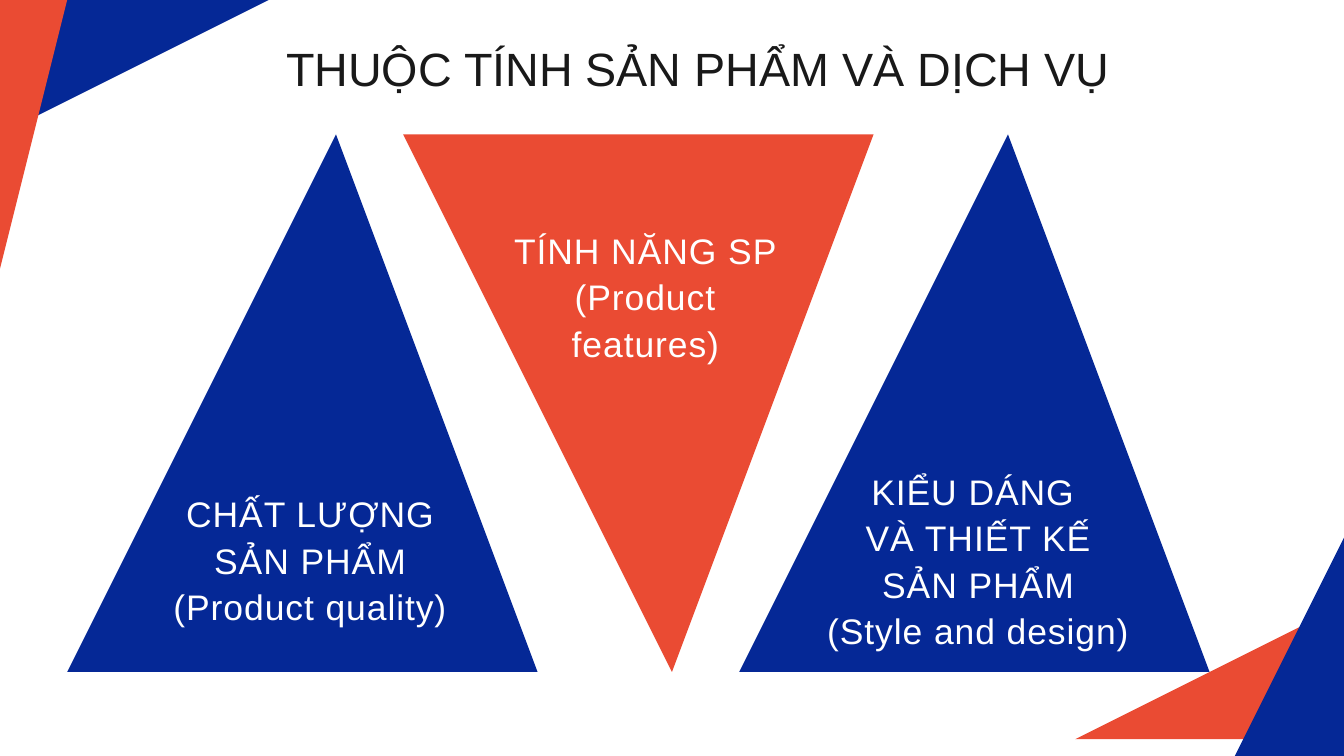
from pptx import Presentation
from pptx.dml.color import RGBColor
from pptx.enum.text import MSO_ANCHOR, MSO_AUTO_SIZE, PP_ALIGN
from pptx.util import Inches, Pt

WIDTH, HEIGHT = 20, 11.25
BLUE, ORANGE, WHITE, INK = "052896", "EA4B33", "FFFFFF", "191919"
TOP, BASE = 2.5, 10.22  # shared edges of the three large triangles

TITLE = "THUỘC TÍNH SẢN PHẨM VÀ DỊCH VỤ"
# left, right, points up, colour, text box (left, top, width, height), lines
ATTRIBUTES = [
    (1.31, 7.92, True, BLUE, (2.35, 7.27, 4.53, 2.05),
     ["CHẤT LƯỢNG", "SẢN PHẨM", "(Product quality)"]),
    (6.23, 12.97, False, ORANGE, (7.5, 3.35, 4.21, 2.05),
     ["TÍNH NĂNG SP", "(Product features)"]),
    (11.1, 18, True, BLUE, (12.19, 6.93, 4.73, 2.73),
     ["KIỂU DÁNG ", "VÀ THIẾT KẾ", "SẢN PHẨM", "(Style and design)"]),
]
# Corner decorations, back to front
CORNERS = [
    (BLUE, [(-0.13, 1.89), (-0.12, 0), (4.11, 0.02)]),
    (ORANGE, [(-0.31, 3.81), (-0.29, 0), (1.43, 0.01)]),
    (ORANGE, [(20.12, 9.36), (20.12, HEIGHT), (15.89, HEIGHT)]),
    (BLUE, [(WIDTH, 7.76), (WIDTH, 11.57), (18.28, 11.57)]),
]


def color(value):
    return RGBColor.from_string(value)


def add_triangle(page, points, fill):
    builder = page.shapes.build_freeform(*points[0], scale=Inches(1))
    builder.add_line_segments(points[1:], close=True)
    shape = builder.convert_to_shape()
    shape.shadow.inherit = False
    shape.fill.solid()
    shape.fill.fore_color.rgb = color(fill)
    shape.line.fill.background()


def write(box, lines, size, leading, ink, tracking=0):
    frame = box.text_frame
    frame.word_wrap = True
    frame.auto_size = MSO_AUTO_SIZE.NONE
    frame.vertical_anchor = MSO_ANCHOR.TOP
    frame.margin_left = frame.margin_right = 0
    frame.margin_top = frame.margin_bottom = 0
    frame.text = "\n".join(lines)
    for para in frame.paragraphs:
        para.alignment = PP_ALIGN.CENTER
        para.line_spacing = Pt(leading)
        para.space_before = Pt(0)
        font = para.font
        font.name, font.size = "Arial", Pt(size)
        font.color.rgb = color(ink)
        if tracking:
            for span in para.runs:
                span._r.get_or_add_rPr().set("spc", str(tracking * 100))


def main():
    deck = Presentation()
    deck.slide_width, deck.slide_height = Inches(WIDTH), Inches(HEIGHT)
    page = deck.slides.add_slide(deck.slide_layouts[5])

    # Title
    title = page.shapes.title
    title.left, title.top, title.width, title.height = map(
        Inches, (2.77, 0.82, 15.24, 0.65))
    write(title, [TITLE], 50, 43.7, INK)

    # Attribute triangles with their labels
    for left, right, upward, fill, area, lines in ATTRIBUTES:
        tip, side = (TOP, BASE) if upward else (BASE, TOP)
        add_triangle(page, [((left + right) / 2, tip), (right, side), (left, side)], fill)
        label = page.shapes.add_textbox(*map(Inches, area))
        write(label, lines, 38, 49.8, WHITE, tracking=1)

    # Corner decorations
    for fill, points in CORNERS:
        add_triangle(page, points, fill)

    deck.save("out.pptx")


if __name__ == "__main__":
    main()
